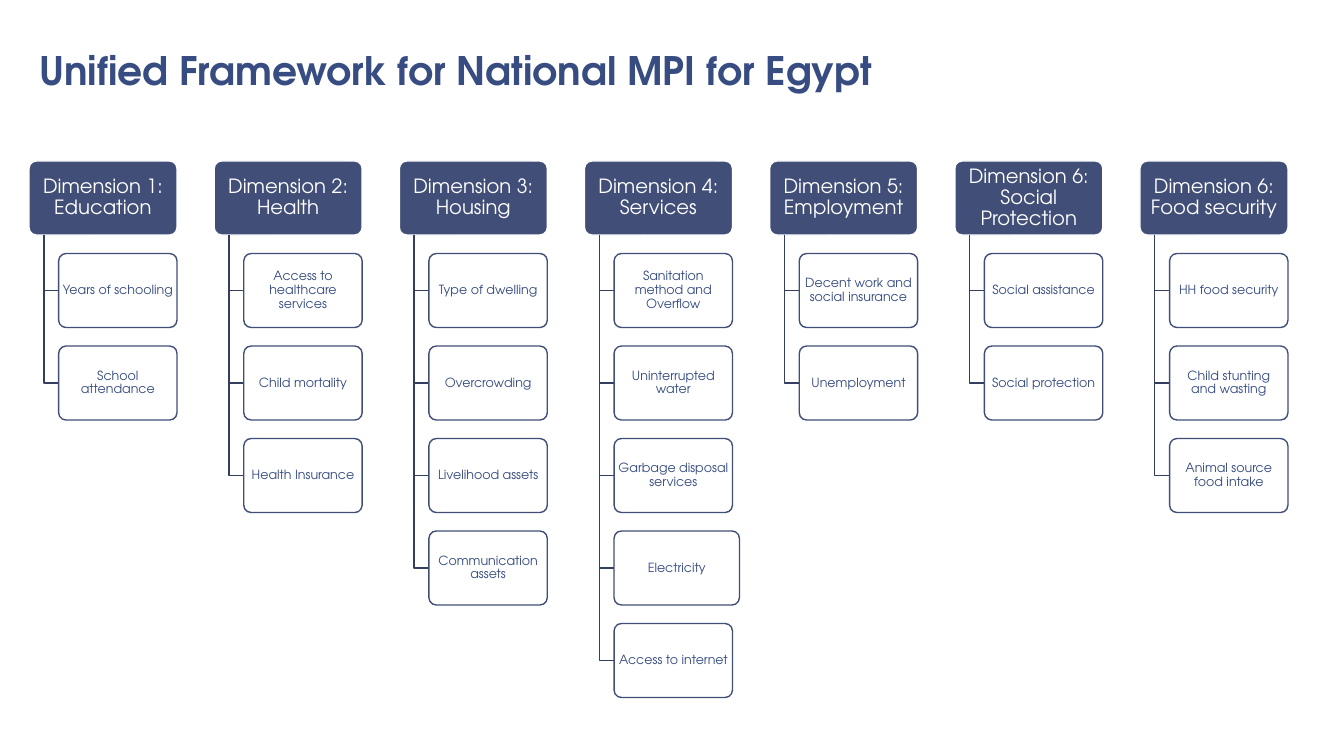
from dataclasses import dataclass

from lxml import etree
from pptx import Presentation
from pptx import util as u
from pptx.dml.color import RGBColor
from pptx.enum import shapes, text
from pptx.oxml.ns import qn

SLIDE_W, SLIDE_H = 1344, 756
EMU_PER_PX = 12192000 / SLIDE_W


def px(length):
    return u.Emu(round(length * EMU_PER_PX))


@dataclass(frozen=True)
class Theme:
    font: str = "TeX Gyre Adventor"
    ink: str = "374C81"
    navy: str = "414E77"
    branch: str = "343E5F"
    white: str = "FFFFFF"
    title_pt: int = 28
    dimension_pt: int = 14
    indicator_pt: int = 9
    line_pt: int = 1


THEME = Theme()

# Card formats: fill, opacity, outline, text and inner margins in px
DIMENSION_CARD = dict(fill=THEME.navy, opacity=100, line=THEME.white,
                      ink=THEME.white, size=THEME.dimension_pt, inset=(3, 2))
INDICATOR_CARD = dict(fill=THEME.white, opacity=90, line=THEME.navy,
                      ink=THEME.ink, size=THEME.indicator_pt, inset=(2, 1))

TITLE = "Unified Framework for National MPI for Egypt"
DIMENSIONS = [
    ("Dimension 1: Education", ["Years of schooling", "School attendance"]),
    ("Dimension 2: Health",
     ["Access to healthcare services", "Child mortality", "Health Insurance"]),
    ("Dimension 3: Housing",
     ["Type of dwelling", "Overcrowding", "Livelihood assets",
      "Communication assets"]),
    ("Dimension 4: Services",
     ["Sanitation method and Overflow", "Uninterrupted water",
      "Garbage disposal services", "Electricity", "Access to internet"]),
    ("Dimension 5: Employment",
     ["Decent work and social insurance", "Unemployment"]),
    ("Dimension 6: Social Protection",
     ["Social assistance", "Social protection"]),
    ("Dimension 6: Food security",
     ["HH food security", "Child stunting and wasting",
      "Animal source food intake"]),
]
CARD_W, CARD_H = 148, 74
ROW_PITCH = CARD_H * 5 / 4
EXTRA_WIDTH = {"Electricity": 7}


def apply_format(target, settings):
    for name, value in settings.items():
        setattr(target, name, value)


def style_font(font, color, size, bold=False):
    apply_format(font, dict(name=THEME.font, size=u.Pt(size), bold=bold))
    font.color.rgb = RGBColor.from_string(color)


def style_line(shape, color):
    shape.shadow.inherit = False
    shape.line.width = u.Pt(THEME.line_pt)
    shape.line.color.rgb = RGBColor.from_string(color)


def add_title(slide, left, top, width, height):
    title = slide.shapes.title
    apply_format(title, dict(left=px(left), top=px(top),
                             width=px(width), height=px(height)))
    frame = title.text_frame
    apply_format(frame, dict(text=TITLE, word_wrap=True,
                             vertical_anchor=text.MSO_ANCHOR.TOP,
                             auto_size=text.MSO_AUTO_SIZE.SHAPE_TO_FIT_TEXT))
    heading = frame.paragraphs[0]
    heading.alignment = text.PP_ALIGN.LEFT
    style_font(heading.runs[0].font, THEME.ink, THEME.title_pt, bold=True)


def add_card(parts, label, left, top, width, look):
    card = parts.add_shape(shapes.MSO_SHAPE.ROUNDED_RECTANGLE,
                           px(left), px(top), px(width), px(CARD_H))
    card.adjustments[0] = 0.1
    style_line(card, look["line"])
    card.fill.solid()
    card.fill.fore_color.rgb = RGBColor.from_string(look["fill"])
    if look["opacity"] < 100:
        fill_color = card.fill._xPr.find(qn("a:solidFill"))[0]
        alpha = etree.SubElement(fill_color, qn("a:alpha"))
        alpha.set("val", str(look["opacity"] * 1000))

    side, edge = map(px, look["inset"])
    frame = card.text_frame
    apply_format(frame, dict(text=label, word_wrap=True,
                             vertical_anchor=text.MSO_ANCHOR.MIDDLE,
                             margin_left=side, margin_right=side,
                             margin_top=edge, margin_bottom=edge))
    caption = frame.paragraphs[0]
    apply_format(caption, dict(alignment=text.PP_ALIGN.CENTER,
                               line_spacing=0.9))
    style_font(caption.runs[0].font, look["ink"], look["size"])


def add_branch(parts, trunk_x, start_y, end_x, end_y):
    outline = parts.build_freeform(px(trunk_x), px(start_y))
    outline.add_line_segments([(px(trunk_x), px(end_y)),
                               (px(end_x), px(end_y))], close=False)
    branch = outline.convert_to_shape()
    branch.fill.background()
    style_line(branch, THEME.branch)


def add_dimension(parts, left, top, dimension, indicators):
    add_card(parts, dimension, left, top, CARD_W, DIMENSION_CARD)
    trunk_x = left + CARD_W / 10
    indicator_x = left + CARD_W / 5
    for row, indicator in enumerate(indicators, start=1):
        row_y = top + row * ROW_PITCH
        add_branch(parts, trunk_x, top + CARD_H,
                   indicator_x, row_y + CARD_H / 2)
        width = CARD_W * 4 / 5 + EXTRA_WIDTH.get(indicator, 0)
        add_card(parts, indicator, indicator_x, row_y, width, INDICATOR_CARD)


def add_framework(slide, left, top, width):
    parts = slide.shapes.add_group_shape().shapes
    column_pitch = (width - CARD_W) / (len(DIMENSIONS) - 1)
    for column, (dimension, indicators) in enumerate(DIMENSIONS):
        add_dimension(parts, left + column * column_pitch, top,
                      dimension, indicators)


def main():
    deck = Presentation()
    apply_format(deck, dict(slide_width=px(SLIDE_W), slide_height=px(SLIDE_H)))
    slide = deck.slides.add_slide(deck.slide_layouts[5])
    add_title(slide, left=29, top=41, width=970, height=57)
    add_framework(slide, left=29, top=161, width=1259)
    deck.save("out.pptx")


if __name__ == "__main__":
    main()
